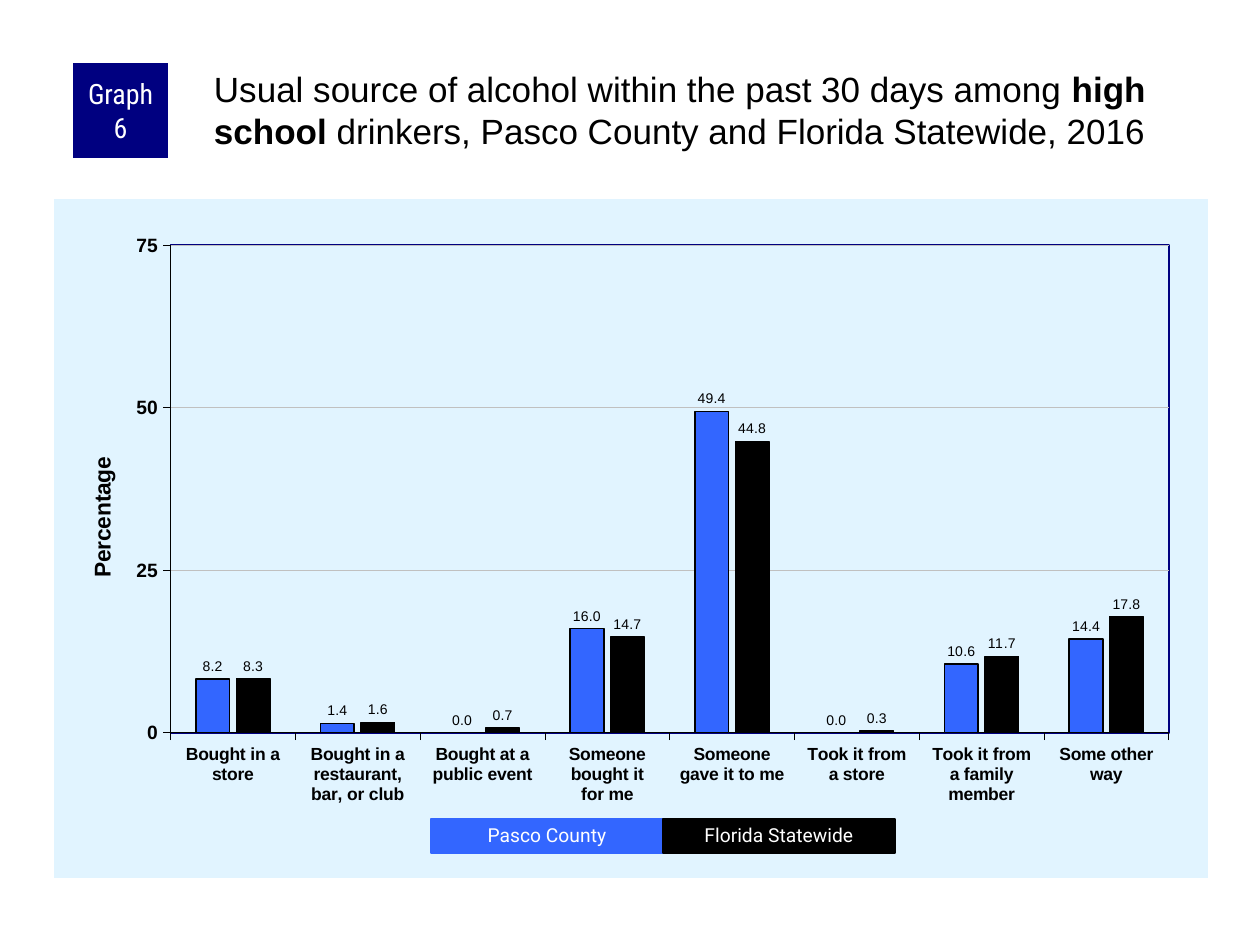
import pptx
import pptx.chart.data
import pptx.dml.color
import pptx.enum.chart
import pptx.enum.shapes
import pptx.enum.text
import pptx.oxml
import pptx.oxml.ns
import pptx.util

RGB = pptx.dml.color.RGBColor
WHITE = RGB(0xFF, 0xFF, 0xFF)
BLACK = RGB(0, 0, 0)
NAVY = RGB(0, 0, 0x80)
BLUE = RGB(0x33, 0x66, 0xFF)
GRAY = RGB(0xC0, 0xC0, 0xC0)
PALE = RGB(0xE1, 0xF4, 0xFF)

TITLE = [
    ("Usual source of alcohol within the past 30 days among ", False),
    ("high school", True),
    (" drinkers, Pasco County and Florida Statewide, 2016", False),
]
ROWS = [
    ("Bought in a store", 8.2, 8.3),
    ("Bought in a restaurant, bar, or club", 1.4, 1.6),
    ("Bought at a public event", 0, 0.7),
    ("Someone bought it\nfor me", 16, 14.7),
    ("Someone\ngave it to me", 49.4, 44.8),
    ("Took it from\na store", 0, 0.3),
    ("Took it from\na family member", 10.6, 11.7),
    ("Some other way", 14.4, 17.8),
]
# name, fill, outline width in points
SERIES = [("Pasco County", BLUE, 1), ("Florida Statewide", BLACK, 0.75)]

SCALE = 914400 / 126  # EMU per px
CHART = (54, 199, 1154, 679)
BADGE = (73, 63, 95, 95)
HEAD = (210, 63, 998, 105)
KEY = (431, 819, 232, 34)
PLOT = {"x": 0.101, "y": 0.068, "w": 0.865, "h": 0.718}
AXIS_NAME = {"x": 0.026, "y": 0.374}


def px(*nums):
    return [round(n * SCALE) for n in nums]


def style(font, size, color, name="Arial", bold=False):
    font.size = pptx.util.Pt(size)
    font.color.rgb = color
    font.name = name
    font.bold = bold


def stroke(line, color, width):
    line.color.rgb = color
    line.width = pptx.util.Pt(width)


def make(xml):
    spaces = pptx.oxml.ns.nsdecls("c", "a")
    return pptx.oxml.parse_xml(xml.replace(">", f" {spaces}>", 1))


def layout(spots, inner=False):
    """Manual chart layout, in fractions of the chart's size."""
    parts = '<c:layoutTarget val="inner"/>' if inner else ""
    parts += "".join(f'<c:{k}Mode val="edge"/>' for k in "xy")
    parts += "".join(f'<c:{k} val="{v}"/>' for k, v in spots.items())
    return make(f"<c:layout><c:manualLayout>{parts}</c:manualLayout></c:layout>")


def solid(color):
    return f'<a:solidFill><a:srgbClr val="{color}"/></a:solidFill>'


def add_box(slide, place, text, fill, size, name):
    box = slide.shapes.add_shape(
        pptx.enum.shapes.MSO_SHAPE.RECTANGLE, *px(*place))
    box.shadow.inherit = False
    box.fill.solid()
    box.fill.fore_color.rgb = fill
    box.line.fill.background()
    frame = box.text_frame
    frame.word_wrap = True
    frame.vertical_anchor = pptx.enum.text.MSO_ANCHOR.MIDDLE
    para = frame.paragraphs[0]
    para.text = text
    para.alignment = pptx.enum.text.PP_ALIGN.CENTER
    style(para.font, size, WHITE, name)
    return box


def add_title(slide):
    frame = slide.shapes.add_textbox(*px(*HEAD)).text_frame
    frame.word_wrap = True
    frame.margin_left, frame.margin_top = px(4, 4)
    frame.margin_right = frame.margin_bottom = 0
    para = frame.paragraphs[0]
    for text, bold in TITLE:
        run = para.add_run()
        run.text = text
        style(run.font, 20, BLACK, bold=bold)


def set_axes(chart):
    for axis, size in ((chart.category_axis, 10), (chart.value_axis, 11)):
        axis.major_tick_mark = pptx.enum.chart.XL_TICK_MARK.OUTSIDE
        axis.minor_tick_mark = pptx.enum.chart.XL_TICK_MARK.NONE
        style(axis.tick_labels.font, size, BLACK, bold=True)
        stroke(axis.format.line, BLACK, 0.25)
    axis = chart.value_axis
    axis.minimum_scale, axis.maximum_scale, axis.major_unit = 0, 75, 25
    axis.has_major_gridlines = True
    stroke(axis.major_gridlines.format.line, GRAY, 0.25)
    axis.tick_labels.number_format = "0"
    axis.tick_labels.number_format_is_linked = False
    para = axis.axis_title.text_frame.paragraphs[0]
    para.text = "Percentage"
    style(para.font, 13, BLACK, bold=True)
    title = axis.axis_title._element
    for old in title.findall(pptx.oxml.ns.qn("c:layout")):
        title.remove(old)
    title.find(pptx.oxml.ns.qn("c:tx")).addnext(layout(AXIS_NAME))


def set_areas(chart):
    """Place and frame the plot, and fill the whole chart."""
    root = chart._chartSpace
    area = root.chart.plotArea
    for old in area.findall(pptx.oxml.ns.qn("c:layout")):
        area.remove(old)
    area.insert(0, layout(PLOT, inner=True))
    area.append(make(
        f'<c:spPr><a:noFill/><a:ln w="12700">{solid(NAVY)}</a:ln></c:spPr>'))
    root.chart.addnext(make(
        f"<c:spPr>{solid(PALE)}<a:ln><a:noFill/></a:ln></c:spPr>"))


def add_chart(slide):
    data = pptx.chart.data.CategoryChartData(number_format="0.0")
    names, *cols = zip(*ROWS)
    data.categories = names
    for (name, _, _), vals in zip(SERIES, cols):
        data.add_series(name, vals)
    chart = slide.shapes.add_chart(
        pptx.enum.chart.XL_CHART_TYPE.COLUMN_CLUSTERED,
        *px(*CHART), data).chart
    chart.has_title = chart.has_legend = False
    style(chart.font, 11.5, BLACK)
    plot = chart.plots[0]
    plot.vary_by_categories = False
    plot.gap_width, plot.overlap = 150, -20
    for series, (_, color, width) in zip(plot.series, SERIES):
        series.invert_if_negative = False
        series.format.fill.solid()
        series.format.fill.fore_color.rgb = color
        stroke(series.format.line, BLACK, width)
        labels = series.data_labels
        labels.show_value = True
        labels.position = pptx.enum.chart.XL_LABEL_POSITION.OUTSIDE_END
        labels.number_format = "0.0"
        labels.number_format_is_linked = False
        style(labels.font, 8, BLACK)
    set_axes(chart)
    set_areas(chart)


def add_key(slide):
    left, top, width, height = KEY
    for i, (name, color, _) in enumerate(SERIES):
        place = (left + i * width, top, width, height)
        box = add_box(slide, place, name, color, 11, "Roboto")
        stroke(box.line, color, 0.75)
        box.text_frame.paragraphs[0].line_spacing = 0.9


def main():
    deck = pptx.Presentation()
    deck.slide_width, deck.slide_height = px(1260, 945)
    slide = deck.slides.add_slide(deck.slide_layouts[6])
    add_chart(slide)
    badge = add_box(slide, BADGE, "Graph 6", NAVY, 16, "Roboto Condensed")
    frame = badge.text_frame
    frame.margin_left, frame.margin_right = px(6, 6)
    frame.margin_top = frame.margin_bottom = 0
    add_title(slide)
    add_key(slide)
    deck.save("out.pptx")


if __name__ == "__main__":
    main()
